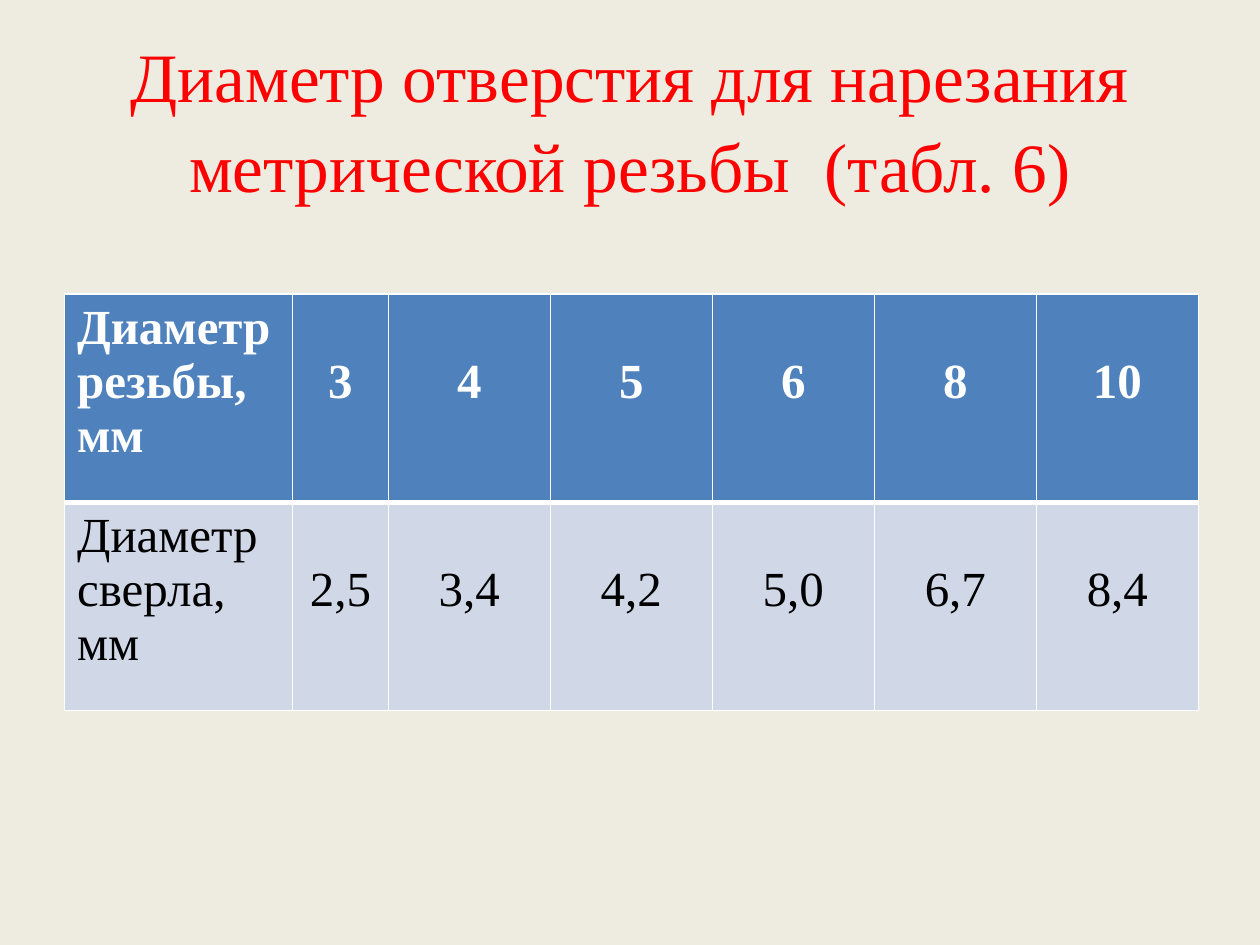
from lxml.etree import SubElement
from pptx import Presentation
from pptx.dml.color import RGBColor
from pptx.enum.text import MSO_ANCHOR, PP_ALIGN
from pptx.oxml.ns import qn
from pptx.util import Pt

FONT = "Times New Roman"
WHITE = "FFFFFF"
ROWS = [
    ["Диаметр резьбы, мм", "3", "4", "5", "6", "8", "10"],
    ["Диаметр сверла, мм", "2,5", "3,4", "4,2", "5,0", "6,7", "8,4"],
]
COL_WIDTHS = [130.3, 54.7] + [92.6] * 5
ROW_HEIGHT = 119
MARGIN_TOP = 3.6
LINE_HEIGHT = 31


def rgb(color):
    return RGBColor.from_string(color)


def set_font(p, size, color, bold=False):
    p.font.name = FONT
    p.font.size = Pt(size)
    p.font.bold = bold
    p.font.color.rgb = rgb(color)


def set_borders(cell, bottom):
    """Draw white cell edges, 1 pt wide except for the bottom one."""
    tc_pr = cell._tc.get_or_add_tcPr()
    edges = [("a:lnL", 1), ("a:lnR", 1), ("a:lnT", 1), ("a:lnB", bottom)]
    for i, (tag, width) in enumerate(edges):
        ln = SubElement(tc_pr, qn(tag), w=str(Pt(width)))
        fill = SubElement(ln, qn("a:solidFill"))
        SubElement(fill, qn("a:srgbClr"), val=WHITE)
        tc_pr.insert(i, ln)


def add_title(s, text):
    sp = s.shapes.title
    sp.left, sp.top, sp.width, sp.height = Pt(36), Pt(21.6), Pt(648), Pt(90)
    tf = sp.text_frame
    tf.text = text
    tf.vertical_anchor = MSO_ANCHOR.MIDDLE
    p = tf.paragraphs[0]
    p.alignment = PP_ALIGN.CENTER
    p.line_spacing = 1.08
    set_font(p, 39.6, "FF0000")


def fill_cell(cell, text, is_header, is_label):
    cell.text = text
    cell.fill.solid()
    cell.fill.fore_color.rgb = rgb("4F81BD" if is_header else "D0D8E8")
    # Values stand level with the second line of the row label.
    cell.margin_top = Pt(MARGIN_TOP if is_label else MARGIN_TOP + LINE_HEIGHT)
    p = cell.text_frame.paragraphs[0]
    p.alignment = PP_ALIGN.LEFT if is_label else PP_ALIGN.CENTER
    set_font(p, 28, WHITE if is_header else "000000", is_header)
    set_borders(cell, bottom=3 if is_header else 1)


def add_thread_table(s):
    table = s.shapes.add_table(
        len(ROWS), len(COL_WIDTHS), Pt(36.9), Pt(168),
        Pt(sum(COL_WIDTHS)), Pt(ROW_HEIGHT * len(ROWS))).table
    for col, width in zip(table.columns, COL_WIDTHS):
        col.width = Pt(width)
    for r, values in enumerate(ROWS):
        table.rows[r].height = Pt(ROW_HEIGHT)
        for c, text in enumerate(values):
            fill_cell(table.cell(r, c), text, r == 0, c == 0)


def main():
    prs = Presentation()
    prs.slide_width, prs.slide_height = Pt(720), Pt(540)
    s = prs.slides.add_slide(prs.slide_layouts[5])
    s.background.fill.solid()
    s.background.fill.fore_color.rgb = rgb("EEECE1")
    add_title(s, "Диаметр отверстия для нарезания метрической резьбы  (табл. 6)")
    add_thread_table(s)
    prs.save("out.pptx")


if __name__ == "__main__":
    main()
